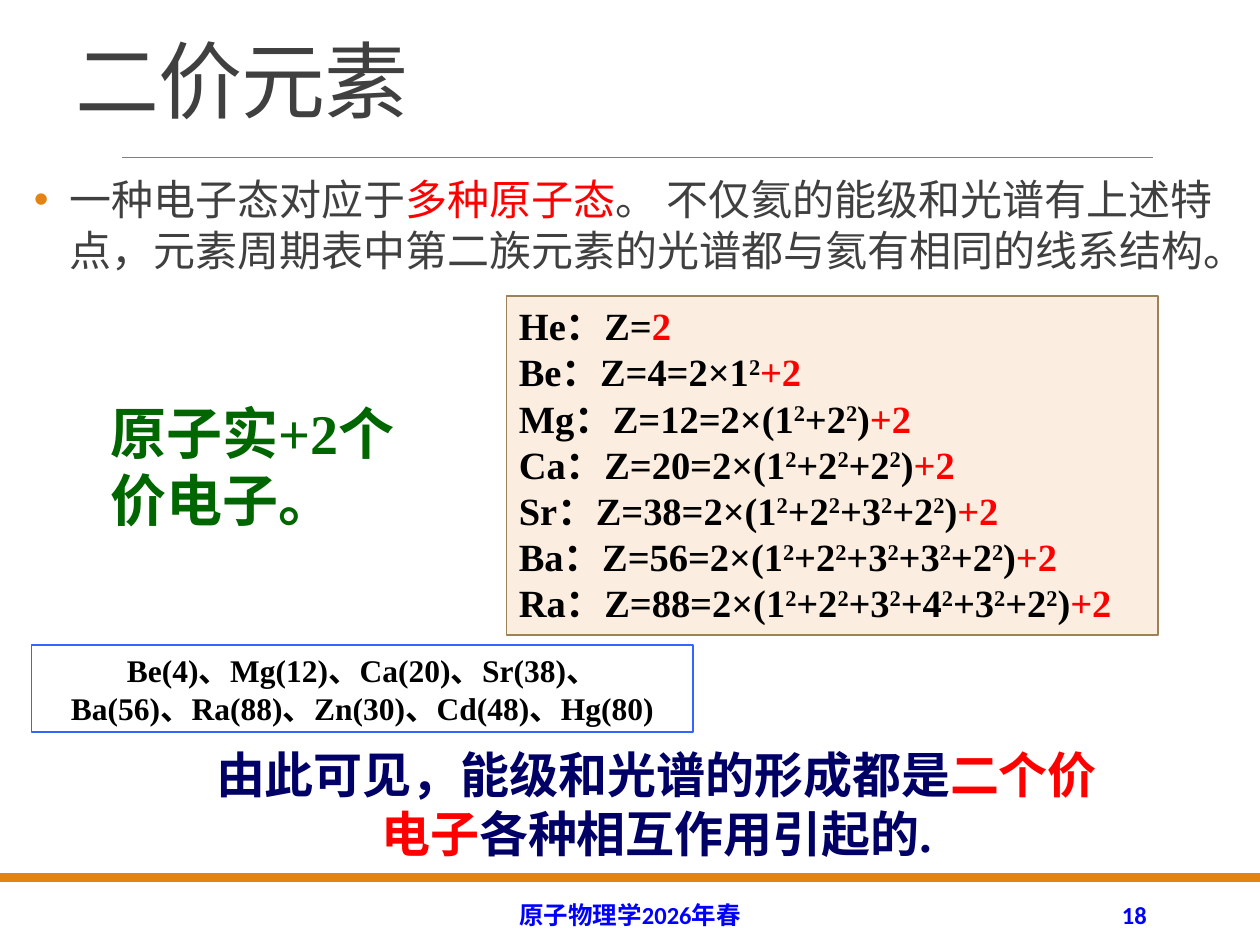
from lxml.etree import SubElement
from pptx import Presentation
from pptx.dml.color import RGBColor
from pptx.enum.shapes import MSO_CONNECTOR, MSO_SHAPE
from pptx.enum.text import MSO_ANCHOR, PP_ALIGN
from pptx.oxml.ns import qn
from pptx.util import Inches, Pt

ORANGE, GREY, RED, BLUE, BLACK = "E48312", "404040", "FF0000", "0000FF", "000000"
GREEN, NAVY = "006600", "000066"
SERIF, SANS, CHINESE = "Times New Roman", "Calibri", "Noto Sans CJK SC"

# Element symbol, atomic number, and the n of each filled 2n² shell
ELEMENTS = [("He", 2, ""), ("Be", 4, "1"), ("Mg", 12, "12"), ("Ca", 20, "122"),
            ("Sr", 38, "1232"), ("Ba", 56, "12332"), ("Ra", 88, "123432")]


def colour(hex_string):
    return RGBColor.from_string(hex_string)


def add_run(paragraph, text, size, hex_colour, font=SERIF, bold=True,
            raised=False, spacing=None):
    run = paragraph.add_run()
    run.text = text
    run.font.size = Pt(size)
    run.font.bold = bold
    run.font.name = font
    run.font.color.rgb = colour(hex_colour)
    properties = run.font._element
    SubElement(properties, qn("a:ea"), typeface=CHINESE)
    if raised:
        properties.set("baseline", "30000")
    if spacing is not None:
        properties.set("spc", str(round(spacing * 100)))


def set_frame(shape, anchor=MSO_ANCHOR.TOP, wrap=True):
    frame = shape.text_frame
    frame.word_wrap = wrap
    frame.vertical_anchor = anchor
    return frame


def add_text(slide, box, runs, size, align=PP_ALIGN.LEFT, anchor=MSO_ANCHOR.TOP,
             **style):
    shape = slide.shapes.add_textbox(*map(Inches, box))
    paragraph = set_frame(shape, anchor).paragraphs[0]
    paragraph.alignment = align
    for text, hex_colour in runs:
        add_run(paragraph, text, size, hex_colour, **style)
    return shape


def add_box(slide, box, fill=None, line=None, width=1):
    shape = slide.shapes.add_shape(MSO_SHAPE.RECTANGLE, *map(Inches, box))
    shape.shadow.inherit = False
    if fill:
        shape.fill.solid()
        shape.fill.fore_color.rgb = colour(fill)
    else:
        shape.fill.background()
    if line:
        shape.line.color.rgb = colour(line)
        shape.line.width = Pt(width)
    else:
        shape.line.fill.background()
    return shape


def add_title(slide, box, text):
    title = slide.shapes.title
    title.left, title.top, title.width, title.height = map(Inches, box)
    paragraph = set_frame(title, MSO_ANCHOR.BOTTOM).paragraphs[0]
    paragraph.alignment = PP_ALIGN.LEFT
    paragraph.line_spacing = 0.85
    add_run(paragraph, text, 48, GREY, SANS, bold=False, spacing=-0.5)


def add_rule(slide, left, right, top):
    rule = slide.shapes.add_connector(
        MSO_CONNECTOR.STRAIGHT, *map(Inches, (left, top, right, top)))
    rule.line.color.rgb = colour("808080")
    rule.line.width = Pt(0.5)
    SubElement(rule._element.spPr, qn("a:effectLst"))


def add_bullet_text(slide, box, runs):
    shape = add_text(slide, box, runs, 24, font=SANS, bold=False)
    frame = shape.text_frame
    frame.margin_left = frame.margin_right = 0
    properties = frame.paragraphs[0]._p.get_or_add_pPr()
    properties.set("marL", str(Inches(0.3)))
    properties.set("indent", str(Inches(-0.28)))
    bullet_colour = SubElement(properties, qn("a:buClr"))
    SubElement(bullet_colour, qn("a:srgbClr"), val=ORANGE)
    SubElement(properties, qn("a:buFont"), typeface="Arial")
    SubElement(properties, qn("a:buChar"), char="•")


def add_shell_formula(paragraph, symbol, number, shells):
    def add(text, hex_colour=BLACK, raised=False):
        add_run(paragraph, text, 22, hex_colour, raised=raised)

    if not shells:
        add(f"{symbol}：Z=")
        add(str(number), RED)
        return
    bracketed = len(shells) > 1
    lead = f"{symbol}：Z={number}=2×" + ("(" if bracketed else "")
    for shell in shells:
        add(lead + shell)
        add("2", raised=True)
        lead = "+"
    if bracketed:
        add(")")
    add("+2", RED)


def add_formula_panel(slide, box):
    panel = add_box(slide, box, ORANGE, "9B8357")
    fill_colour = panel._element.spPr.find(qn("a:solidFill")).find(qn("a:srgbClr"))
    SubElement(fill_colour, qn("a:alpha"), val="13000")
    frame = set_frame(panel)
    for index, element in enumerate(ELEMENTS):
        paragraph = frame.add_paragraph() if index else frame.paragraphs[0]
        paragraph.alignment = PP_ALIGN.JUSTIFY
        add_shell_formula(paragraph, *element)


def add_element_list(slide, box, lines):
    frame = set_frame(add_box(slide, box, line="3366FF", width=0.75),
                      MSO_ANCHOR.MIDDLE, wrap=False)
    for index, line in enumerate(lines):
        paragraph = frame.add_paragraph() if index else frame.paragraphs[0]
        paragraph.alignment = PP_ALIGN.CENTER
        add_run(paragraph, line, 18, BLACK)


def add_footer(slide, top, height):
    for left, width, text, align in [(3.02, 3.96, "原子物理学2026年春", PP_ALIGN.CENTER),
                                     (8.12, 1.08, "18", PP_ALIGN.RIGHT)]:
        add_text(slide, (left, top, width, height), [(text, BLUE)], 14, align,
                 MSO_ANCHOR.MIDDLE, font=SANS)


def main():
    presentation = Presentation()
    presentation.slide_width, presentation.slide_height = Inches(10), Inches(7.5)
    slide = presentation.slides.add_slide(presentation.slide_layouts[5])

    # Frame of the slide
    add_box(slide, (0, 6.93, 10, 0.07), ORANGE)
    add_rule(slide, 0.97, 9.15, 1.25)
    add_title(slide, (0.5, 0.06, 9.08, 1.02), "二价元素")

    # Statement and the electron shells behind it
    add_bullet_text(slide, (0.25, 1.33, 9.5, 0.99), [
        ("一种电子态对应于", GREY), ("多种原子态", RED),
        ("。 不仅氦的能级和光谱有上述特点，元素周期表中第二族元素的光谱都与氦有相同的线系结构。", GREY)])
    add_text(slide, (0.78, 3.11, 2.61, 1.18), [("原子实+2个价电子。", GREEN)], 32)
    add_formula_panel(slide, (4.02, 2.35, 5.17, 2.69))
    add_element_list(slide, (0.25, 5.12, 5.25, 0.69), [
        "Be(4)、Mg(12)、Ca(20)、Sr(38)、",
        "Ba(56)、Ra(88)、Zn(30)、Cd(48)、Hg(80)"])

    # Conclusion and footer
    add_text(slide, (1.5, 5.86, 7.42, 1.04), [
        ("由此可见，能级和光谱的形成都是", NAVY), ("二个价电子", RED),
        ("各种相互作用引起的.", NAVY)], 28, PP_ALIGN.CENTER)
    add_footer(slide, 7.06, 0.4)

    presentation.save("out.pptx")


if __name__ == "__main__":
    main()
